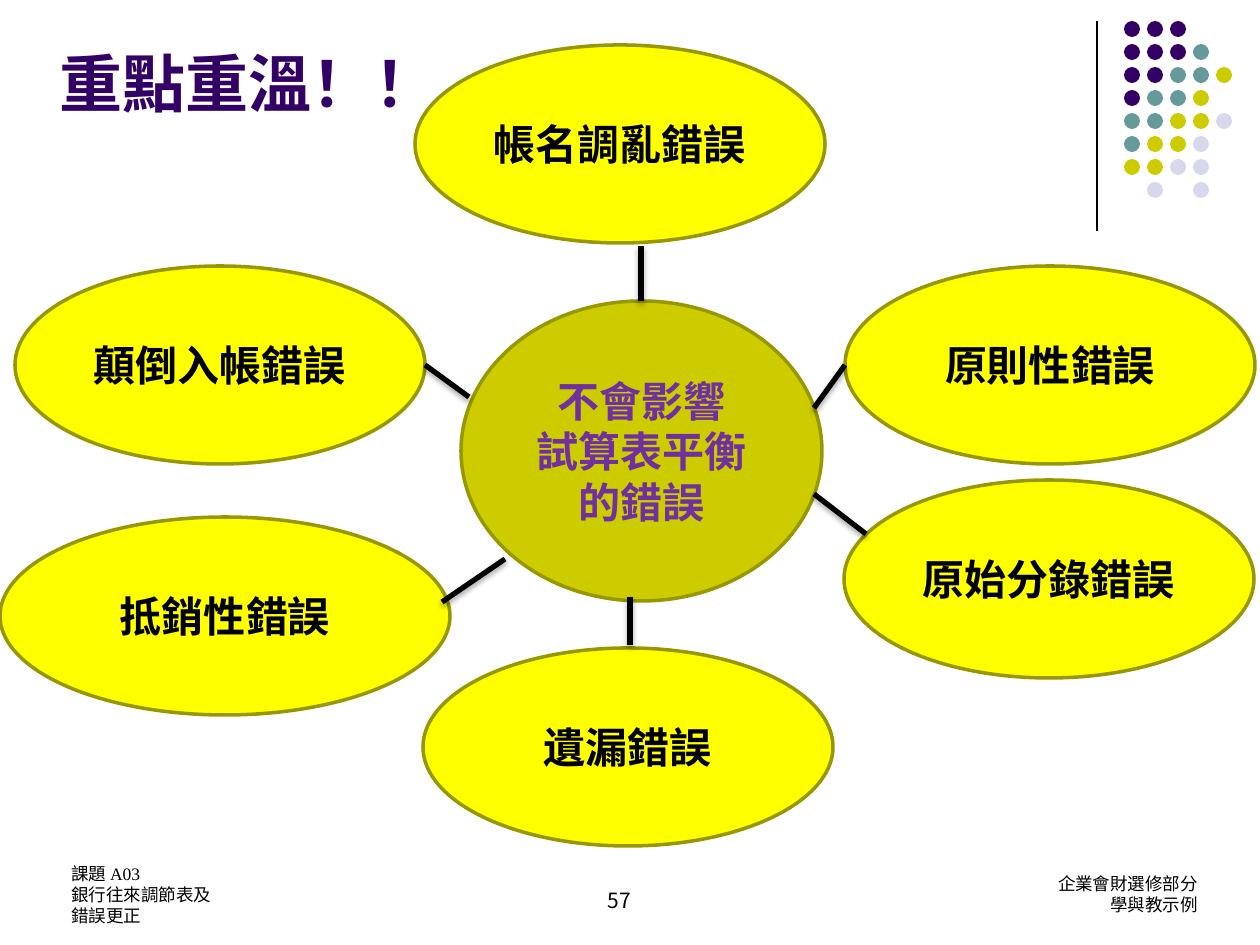
from dataclasses import dataclass

import lxml.etree
import pptx
import pptx.dml.color
import pptx.enum.shapes
import pptx.enum.text
import pptx.oxml.ns
import pptx.util

PX_PER_INCH = 126
ALIGN = pptx.enum.text.PP_ALIGN
ANCHOR = pptx.enum.text.MSO_ANCHOR
OVAL = pptx.enum.shapes.MSO_SHAPE.OVAL


@dataclass(frozen=True)
class Theme:
    purple: str = "330066"
    teal: str = "669999"
    olive: str = "CCCC00"
    pale: str = "D8D8EC"
    yellow: str = "FFFF00"
    outline: str = "979700"
    violet: str = "7030A0"
    black: str = "000000"
    cjk: str = "Noto Sans CJK TC"
    title_size: int = 36
    bubble_size: int = 24
    number_size: int = 12
    footer_size: int = 10
    line_height: float = 1.2


THEME = Theme()


@dataclass(frozen=True)
class Frame:
    left: int
    top: int
    width: int
    height: int


@dataclass(frozen=True)
class Bubble:
    lines: tuple[str, ...]
    frame: Frame
    fill: str = THEME.yellow
    color: str = THEME.black


@dataclass(frozen=True)
class Caption:
    lines: tuple[str, ...]
    frame: Frame
    size: int
    latin: str
    align: ALIGN
    top_inset: int


@dataclass(frozen=True)
class Link:
    x1: int
    y1: int
    x2: int
    y2: int


TITLE_FRAME = Frame(47, 38, 404, 89)
DIVIDER = Link(1097, 21, 1097, 231)

DOT_ROWS = ("PPP", "PPPT", "PPTTO", "PTTO", "TTOOL", "TOOL", "OOLL", " L L")
DOT_COLORS = {"P": THEME.purple, "T": THEME.teal, "O": THEME.olive, "L": THEME.pale}
DOT_LEFT, DOT_TOP, DOT_PITCH, DOT_SIZE = 1124, 21, 23, 16

BUBBLES = (
    Bubble(("不會影響", "試算表平衡的錯誤"), Frame(461, 301, 361, 300), THEME.olive, THEME.violet),
    Bubble(("帳名調亂錯誤",), Frame(415, 45, 410, 198)),
    Bubble(("遺漏錯誤",), Frame(423, 648, 410, 198)),
    Bubble(("原始分錄錯誤",), Frame(844, 480, 410, 198)),
    Bubble(("抵銷性錯誤",), Frame(0, 517, 450, 198)),
    Bubble(("顛倒入帳錯誤",), Frame(15, 266, 410, 198)),
    Bubble(("原則性錯誤",), Frame(845, 266, 410, 198)),
)

LINKS = (
    Link(641, 301, 641, 246),
    Link(630, 645, 630, 597),
    Link(814, 408, 845, 365),
    Link(866, 534, 814, 494),
    Link(469, 397, 425, 365),
    Link(442, 602, 505, 559),
)

CAPTIONS = (
    Caption(("企業會財選修部分", "學與教示例"), Frame(742, 844, 468, 63),
            THEME.footer_size, "Arial", ALIGN.RIGHT, 29),
    Caption(("課題 A03", "銀行往來調節表及", "錯誤更正"), Frame(59, 857, 294, 63),
            THEME.footer_size, "Times New Roman", ALIGN.LEFT, 6),
    Caption(("57",), Frame(420, 857, 399, 63),
            THEME.number_size, THEME.cjk, ALIGN.CENTER, 31),
)


def emu(px: int) -> int:
    return round(px * 914400 / PX_PER_INCH)


def rgb(color: str) -> pptx.dml.color.RGBColor:
    return pptx.dml.color.RGBColor.from_string(color)


def bounds(frame: Frame) -> tuple[int, ...]:
    return tuple(emu(px) for px in (frame.left, frame.top, frame.width, frame.height))


def write(text_frame, lines: tuple[str, ...], size: int, color: str, align: ALIGN,
          latin: str = THEME.cjk, bold: bool = False) -> None:
    text_frame.word_wrap = True
    text_frame.auto_size = pptx.enum.text.MSO_AUTO_SIZE.NONE
    text_frame.text = "\n".join(lines)
    for para in text_frame.paragraphs:
        para.alignment = align
        para.line_spacing = pptx.util.Pt(size * THEME.line_height)
        para.font.size = pptx.util.Pt(size)
        para.font.bold = bold
        para.font.color.rgb = rgb(color)
        para.font.name = latin
        defaults = para._p.pPr.find(pptx.oxml.ns.qn("a:defRPr"))
        lxml.etree.SubElement(defaults, pptx.oxml.ns.qn("a:ea"), typeface=THEME.cjk)


def add_title(page, text: str) -> None:
    title = page.shapes.title
    title.left, title.top, title.width, title.height = bounds(TITLE_FRAME)
    title.text_frame.vertical_anchor = ANCHOR.MIDDLE
    write(title.text_frame, (text,), THEME.title_size, THEME.purple, ALIGN.LEFT, bold=True)


def add_oval(page, frame: Frame, fill: str):
    oval = page.shapes.add_shape(OVAL, *bounds(frame))
    oval.shadow.inherit = False
    oval.fill.solid()
    oval.fill.fore_color.rgb = rgb(fill)
    oval.line.fill.background()
    return oval


def add_dots(page) -> None:
    for row, pattern in enumerate(DOT_ROWS):
        for column, key in enumerate(pattern):
            if key in DOT_COLORS:
                frame = Frame(DOT_LEFT + column * DOT_PITCH, DOT_TOP + row * DOT_PITCH,
                              DOT_SIZE, DOT_SIZE)
                add_oval(page, frame, DOT_COLORS[key])


def add_bubble(page, bubble: Bubble) -> None:
    oval = add_oval(page, bubble.frame, bubble.fill)
    oval.line.color.rgb = rgb(THEME.outline)
    oval.line.width = pptx.util.Pt(2)
    oval.text_frame.vertical_anchor = ANCHOR.MIDDLE
    write(oval.text_frame, bubble.lines, THEME.bubble_size, bubble.color, ALIGN.CENTER, bold=True)


def add_link(page, link: Link, weight: float, shadow: bool) -> None:
    connector = page.shapes.add_connector(
        pptx.enum.shapes.MSO_CONNECTOR.STRAIGHT,
        *(emu(px) for px in (link.x1, link.y1, link.x2, link.y2)))
    connector.line.color.rgb = rgb(THEME.black)
    connector.line.width = pptx.util.Pt(weight)
    qn = pptx.oxml.ns.qn
    effects = lxml.etree.SubElement(connector._element.spPr, qn("a:effectLst"))
    if shadow:
        outer = lxml.etree.SubElement(effects, qn("a:outerShdw"), blurRad="40000",
                                      dist="23000", dir="5400000", rotWithShape="0")
        tint = lxml.etree.SubElement(outer, qn("a:srgbClr"), val=THEME.black)
        lxml.etree.SubElement(tint, qn("a:alpha"), val="35000")


def add_caption(page, caption: Caption) -> None:
    box = page.shapes.add_textbox(*bounds(caption.frame))
    box.text_frame.margin_top = emu(caption.top_inset)
    write(box.text_frame, caption.lines, caption.size, THEME.black, caption.align, caption.latin)


def main() -> None:
    deck = pptx.Presentation()
    deck.slide_width = pptx.util.Inches(10)
    deck.slide_height = pptx.util.Inches(7.5)
    page = deck.slides.add_slide(deck.slide_layouts.get_by_name("Title Only"))
    add_link(page, DIVIDER, 0.75, shadow=False)
    add_dots(page)
    for caption in CAPTIONS:
        add_caption(page, caption)
    add_title(page, "重點重溫！！")
    for bubble in BUBBLES:
        add_bubble(page, bubble)
    for link in LINKS:
        add_link(page, link, 3, shadow=True)
    deck.save("out.pptx")


if __name__ == "__main__":
    main()
